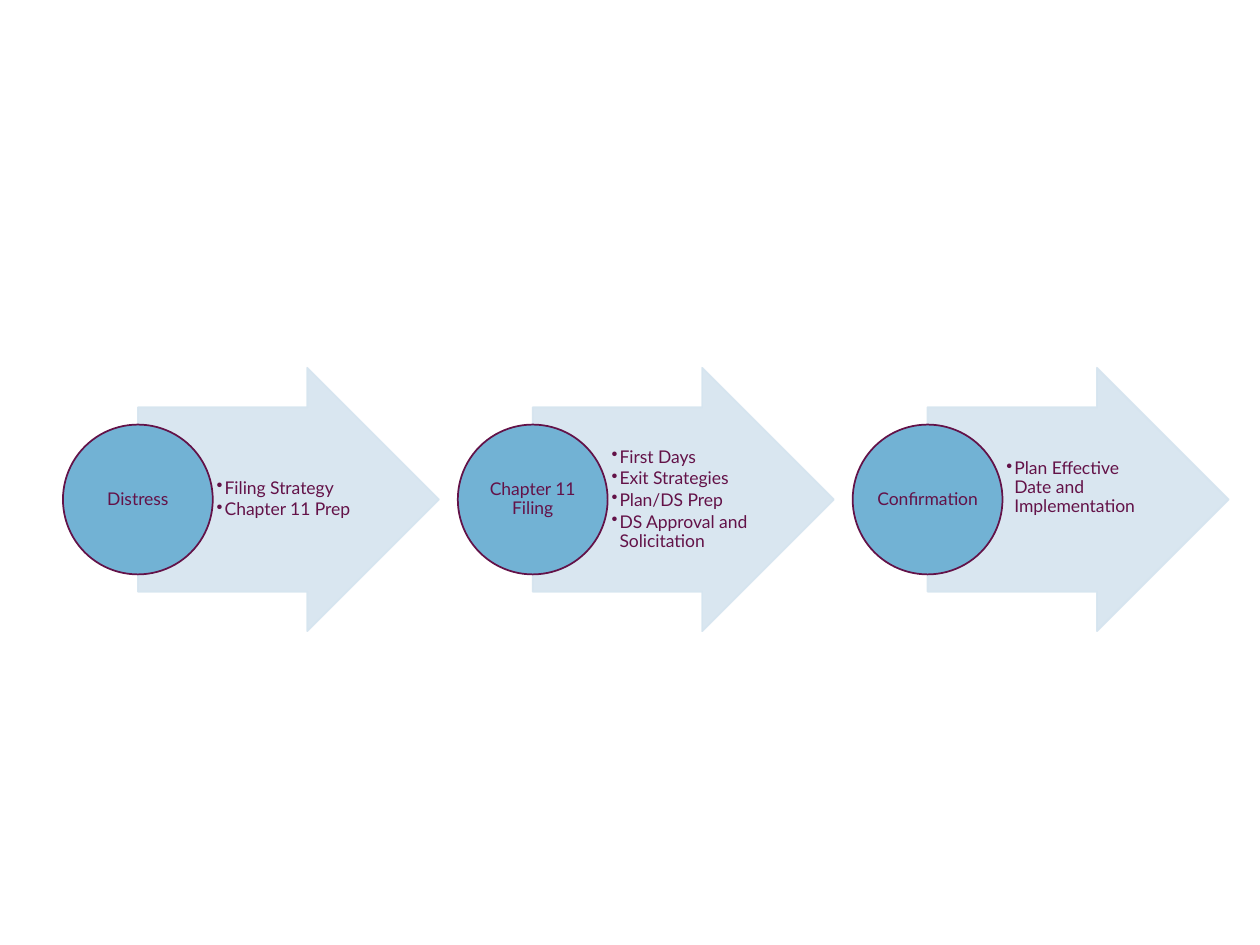
from pptx import Presentation, util as u
from pptx.dml.color import RGBColor
from pptx.enum import shapes, text
from pptx.oxml.ns import qn
from lxml import etree

Cm, Pt = u.Cm, u.Pt
HUES = {"arrow": "D5E4EF", "disc": "72B2D4", "ink": "631248"}

# Layout in centimetres
LEFT, STEP, MID = 1.27, 7.96, 10.07
DISC, LABEL = 3.02, 2.13
ARROW, LIST = (6.07, 5.31), (2.95, 3.71)
INSET = 0.03

# Stage name, bullet points, room below the points
STAGES = [
    ("Distress", ["Filing Strategy", "Chapter 11 Prep"], INSET),
    ("Chapter 11 Filing",
     ["First Days", "Exit Strategies", "Plan/DS Prep",
      "DS Approval and Solicitation"], INSET),
    ("Confirmation", ["Plan Effective Date and Implementation"], 0.5),
]


def hue(name):
    return RGBColor.from_string(HUES[name])


def apply(item, form):
    for key, value in form.items():
        setattr(item, key, value)


def place(x, wide, high):
    """Box that is centred on the row's middle line."""
    return Cm(x), Cm(MID - high / 2), Cm(wide), Cm(high)


def add_shape(slide, kind, box, fill, line):
    shape = slide.shapes.add_shape(kind, *box)
    shape.shadow.inherit = False
    shape.fill.solid()
    shape.fill.fore_color.rgb = hue(fill)
    shape.line.color.rgb = hue(line)
    shape.line.width = Pt(1)
    return shape


def fade(shape, part):
    """Make fill and line partly transparent."""
    for tint in shape._element.spPr.iter(qn("a:srgbClr")):
        etree.SubElement(tint, qn("a:alpha"), val=str(part * 1000))


def add_bullet(para):
    props = para._p.get_or_add_pPr()
    props.set("marL", str(Cm(0.16)))
    props.set("indent", str(-Cm(0.16)))
    etree.SubElement(props, qn("a:buChar"), char="•")


def add_text(slide, box, lines, frame, form, bullet=False):
    body = slide.shapes.add_textbox(*box).text_frame
    apply(body, {"word_wrap": True,
                 "vertical_anchor": text.MSO_ANCHOR.MIDDLE,
                 "margin_top": Cm(INSET), "margin_right": Cm(INSET), **frame})
    for i, line in enumerate(lines):
        para = body.add_paragraph() if i else body.paragraphs[0]
        apply(para, {"line_spacing": 0.9, **form})
        if bullet:
            add_bullet(para)
        run = para.add_run()
        run.text = line
        apply(run.font, {"name": "Lato", "size": Pt(10)})
        run.font.color.rgb = hue("ink")


def add_stage(slide, x, name, points, below):
    kinds = shapes.MSO_SHAPE
    # Arrow starts at the middle of the disc
    arrow = add_shape(slide, kinds.RIGHT_ARROW,
                      place(x + DISC / 2, *ARROW), "arrow", "arrow")
    arrow.adjustments[0], arrow.adjustments[1] = 0.7, 0.5
    fade(arrow, 90)
    # Points start at the right edge of the disc
    add_text(slide, place(x + DISC, *LIST), points,
             {"margin_left": Cm(0.08), "margin_bottom": Cm(below)},
             {"level": 1, "space_after": Pt(1.5)}, bullet=True)
    # Disc and its centred name
    add_shape(slide, kinds.OVAL, place(x, DISC, DISC), "disc", "ink")
    add_text(slide, place(x + (DISC - LABEL) / 2, LABEL, LABEL), [name],
             {"margin_left": Cm(INSET), "margin_bottom": Cm(INSET)},
             {"alignment": text.PP_ALIGN.CENTER, "space_after": Pt(3.5)})


def main():
    deck = Presentation()
    apply(deck, {"slide_width": Cm(25.4), "slide_height": Cm(19.05)})
    slide = deck.slides.add_slide(deck.slide_layouts[6])
    for i, stage in enumerate(STAGES):
        add_stage(slide, LEFT + i * STEP, *stage)
    deck.save("out.pptx")


if __name__ == "__main__":
    main()
